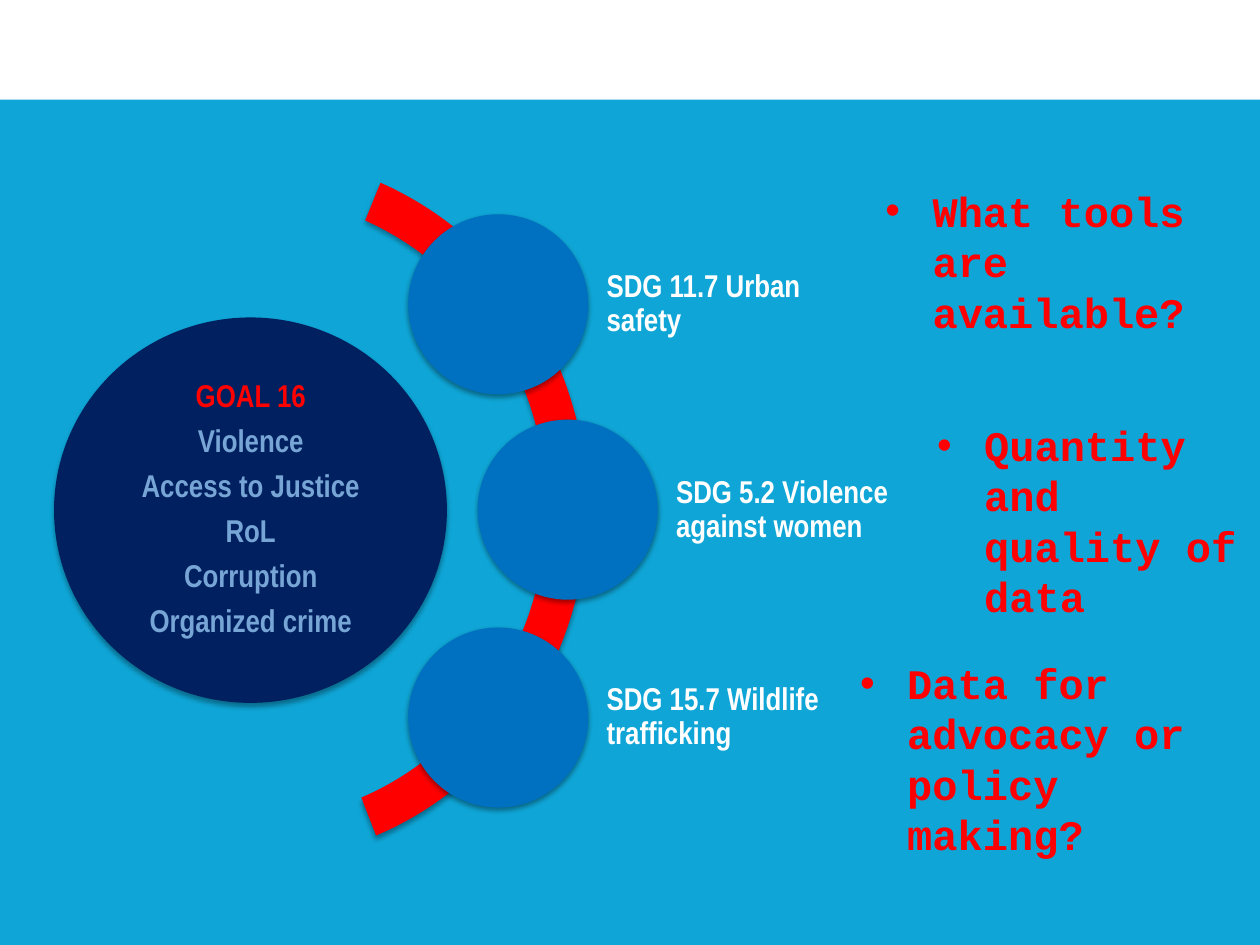
from dataclasses import dataclass

from lxml import etree
from pptx import Presentation
from pptx.dml.color import RGBColor
from pptx.enum.shapes import MSO_SHAPE
from pptx.enum.text import MSO_ANCHOR, MSO_AUTO_SIZE, PP_ALIGN
from pptx.oxml import parse_xml
from pptx.oxml.ns import nsdecls, qn
from pptx.util import Cm, Pt

RECT, OVAL, ARC = MSO_SHAPE.RECTANGLE, MSO_SHAPE.OVAL, MSO_SHAPE.BLOCK_ARC
MIDDLE, TOP = MSO_ANCHOR.MIDDLE, MSO_ANCHOR.TOP
GROW = MSO_AUTO_SIZE.SHAPE_TO_FIT_TEXT
LEFT, CENTER = PP_ALIGN.LEFT, PP_ALIGN.CENTER


@dataclass(frozen=True)
class Theme:
    back: str = "0FA6D7"
    white: str = "FFFFFF"
    navy: str = "002060"
    blue: str = "0070C0"
    red: str = "FF0000"
    pale: str = "77A5D5"
    narrow: str = "Arial Narrow"
    mono: str = "Courier New"
    label: int = 18
    ask: int = 24


THEME = Theme()

GOALS = ["GOAL 16", "Violence", "Access to Justice", "RoL",
         "Corruption", "Organized crime"]
# Left and top of each circle, with its label
NODES = [
    (8.23, 4.32, "SDG 11.7 Urban safety"),
    (9.63, 8.46, "SDG 5.2 Violence against women"),
    (8.23, 12.65, "SDG 15.7 Wildlife trafficking"),
]
# Left, top, width and height of each question
ASKS = [
    (17.6, 3.61, 6.81, 2.31, "What tools are available?"),
    (18.64, 8.33, 6.75, 2.31, "Quantity and quality of data"),
    (17.09, 13.13, 7.8, 3.33, "Data for advocacy or policy making?"),
]
NODE_SIZE = 3.63
INDENT = 0.95


def add_shadow(shape, alpha, dist):
    """Cast a soft shadow straight down."""
    props = shape.fill._xPr
    for old in props.findall(qn("a:effectLst")):
        props.remove(old)
    props.append(parse_xml(
        f'<a:effectLst {nsdecls("a")}>'
        f'<a:outerShdw blurRad="{Pt(3.1)}" dist="{Pt(dist)}" '
        'dir="5400000" rotWithShape="0">'
        f'<a:srgbClr val="000000"><a:alpha val="{alpha * 1000}"/></a:srgbClr>'
        '</a:outerShdw></a:effectLst>'))


def add_form(slide, kind, box, color):
    form = slide.shapes.add_shape(kind, *map(Cm, box))
    form.shadow.inherit = False
    form.fill.solid()
    form.fill.fore_color.rgb = RGBColor.from_string(color)
    form.line.fill.background()
    return form


def add_bullet(para):
    props = para._p.get_or_add_pPr()
    props.set("marL", str(Cm(INDENT)))
    props.set("indent", str(-Cm(INDENT)))
    font = etree.SubElement(props, qn("a:buFont"))
    font.set("typeface", "Arial")
    etree.SubElement(props, qn("a:buChar")).set("char", "•")


def style(para, face, size, color):
    for run in para.runs:
        run.font.name = face
        run.font.size = Pt(size)
        run.font.bold = True
        run.font.color.rgb = RGBColor.from_string(color)


def add_box(slide, box, text, anchor):
    frame = slide.shapes.add_textbox(*map(Cm, box)).text_frame
    frame.word_wrap = True
    frame.vertical_anchor = anchor
    frame.text = text
    return frame


def add_label(slide, box, lines, colors, align, gap):
    """Narrow bold text, centred in height, one colour per line."""
    frame = add_box(slide, box, "\n".join(lines), MIDDLE)
    frame.margin_left = frame.margin_right = Cm(0.08)
    frame.margin_top = frame.margin_bottom = Cm(0.08)
    for para, color in zip(frame.paragraphs, colors):
        para.alignment = align
        para.line_spacing = 0.9
        para.space_after = Pt(gap)
        style(para, THEME.narrow, THEME.label, color)


def add_goal(slide):
    disc = add_form(slide, OVAL, (1.09, 6.4, 7.92, 7.77), THEME.navy)
    add_shadow(disc, 35, 1.8)
    colors = [THEME.red] + [THEME.pale] * (len(GOALS) - 1)
    add_label(slide, (2.26, 7.54, 5.59, 5.49), GOALS, colors, CENTER, 6.3)


def add_arc(slide):
    arc = add_form(slide, ARC, (-1.83, 3.12, 13.67, 14.25), THEME.red)
    # Start and end angle in degrees, then relative thickness
    arc.adjustments[0] = 292.13 * 0.6
    arc.adjustments[1] = 68.65 * 0.6
    arc.adjustments[2] = 0.06
    add_shadow(arc, 35, 1.8)


def add_node(slide, left, top, text):
    disc = add_form(slide, OVAL, (left, top, NODE_SIZE, NODE_SIZE), THEME.blue)
    add_shadow(disc, 38, 1.6)
    box = (left + 3.92, top + 0.07, 4.85, 3.5)
    add_label(slide, box, [text], [THEME.white], LEFT, 1.8)


def add_ask(slide, left, top, width, height, text):
    frame = add_box(slide, (left, top, width, height), text, TOP)
    frame.auto_size = GROW
    para = frame.paragraphs[0]
    add_bullet(para)
    style(para, THEME.mono, THEME.ask, THEME.red)


def main():
    deck = Presentation()
    deck.slide_width, deck.slide_height = Cm(25.4), Cm(19.05)
    slide = deck.slides.add_slide(deck.slide_layouts[6])

    # Background and top band
    fill = slide.background.fill
    fill.solid()
    fill.fore_color.rgb = RGBColor.from_string(THEME.back)
    add_form(slide, RECT, (0, 0, 25.4, 2.01), THEME.white)

    # Goal with its related targets along the arc
    add_goal(slide)
    add_arc(slide)
    for node in NODES:
        add_node(slide, *node)

    # Questions on the right
    for ask in ASKS:
        add_ask(slide, *ask)

    deck.save("out.pptx")


if __name__ == "__main__":
    main()
